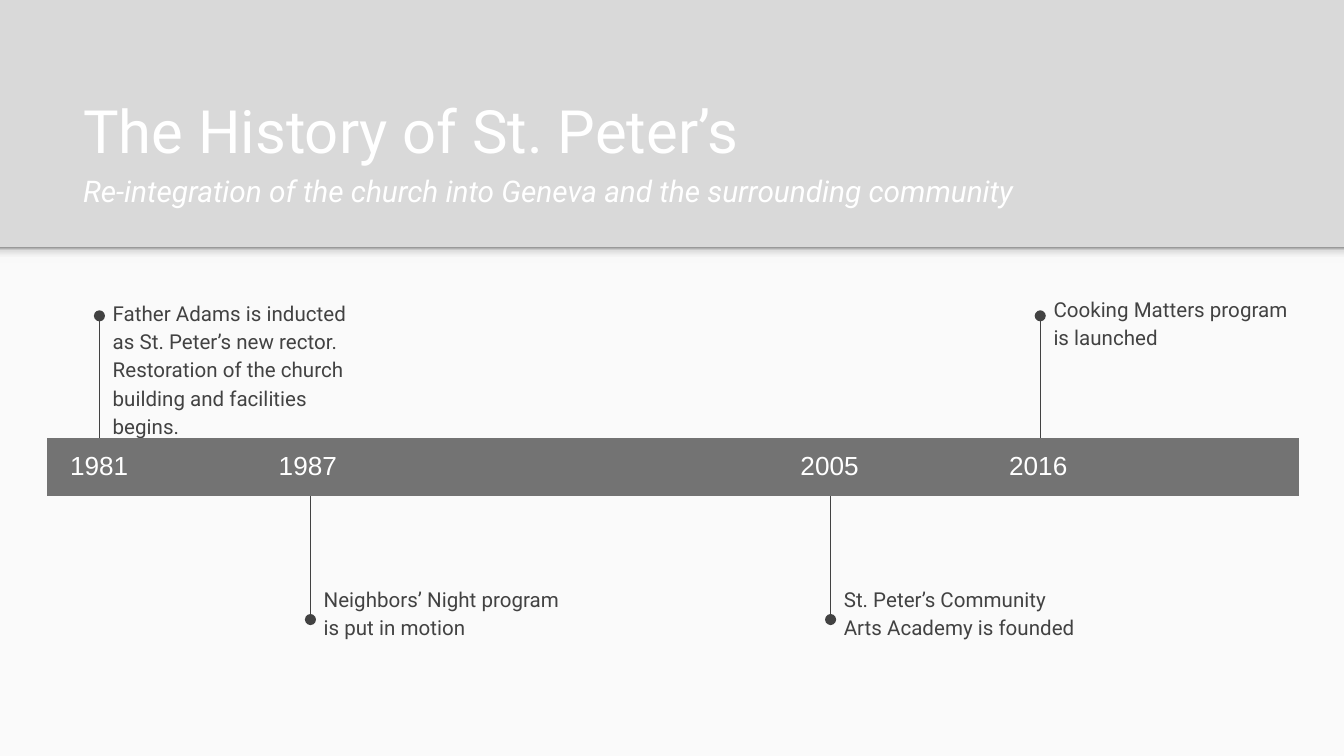
from dataclasses import dataclass

from lxml.etree import SubElement
from pptx import Presentation
from pptx.dml.color import RGBColor as Rgb
from pptx.enum.shapes import MSO_CONNECTOR as Connector, MSO_SHAPE as Shape
from pptx.enum.text import MSO_ANCHOR as Anchor, PP_ALIGN as Align
from pptx.oxml import parse_xml
from pptx.oxml.ns import nsdecls, qn
from pptx.util import Inches, Pt


@dataclass(frozen=True)
class Theme:
    header: str = "D9D9D9"
    panel: str = "FAFAFA"
    band: str = "737373"
    ink: str = "424242"
    light: str = "FFFFFF"
    shade: tuple = ((0, "F9F9F9"), (36, "F9F9F9"), (80, "DEDEDE"), (100, "999999"))
    font: str = "Roboto"
    year_font: str = "Arial"
    title_size: int = 32
    subtitle_size: int = 16
    year_size: int = 14
    note_size: int = 11
    stem_width: float = 0.75
    plain_table: str = "{2D5ABB26-0587-4C30-8999-92F81FD0307C}"


class TimelineSlide:
    def __init__(self, slide, theme):
        self.slide = slide
        self.theme = theme
        backdrop = slide.background.fill
        backdrop.solid()
        backdrop.fore_color.rgb = Rgb.from_string(theme.header)

    def add_run(self, paragraph, text, size, color, font, italic=False):
        run = paragraph.add_run()
        run.text = text
        run.font.size = Pt(size)
        run.font.name = font
        run.font.italic = italic
        run.font.color.rgb = Rgb.from_string(color)

    def add_panel(self, left, top, width, height):
        panel = self.slide.shapes.add_shape(
            Shape.RECTANGLE, Inches(left), Inches(top), Inches(width), Inches(height))
        panel.shadow.inherit = False
        panel.fill.solid()
        panel.fill.fore_color.rgb = Rgb.from_string(self.theme.panel)
        panel.line.fill.background()
        return panel

    def add_shade(self, left, top, width, height):
        shade = self.add_panel(left, top, width, height)
        stops = "".join(
            f'<a:gs pos="{position * 1000}"><a:srgbClr val="{color}"/></a:gs>'
            for position, color in self.theme.shade)
        gradient = parse_xml(
            f'<a:gradFill {nsdecls("a")} rotWithShape="1"><a:gsLst>{stops}</a:gsLst>'
            '<a:lin ang="16200000" scaled="0"/></a:gradFill>')
        properties = shade._element.spPr
        properties.replace(properties.find(qn("a:solidFill")), gradient)

    def add_frame(self, left, top, width, height, anchor=Anchor.TOP):
        box = self.slide.shapes.add_textbox(
            Inches(left), Inches(top), Inches(width), Inches(height))
        frame = box.text_frame
        frame.word_wrap = True
        frame.vertical_anchor = anchor
        frame.margin_left = frame.margin_right = Inches(0.1)
        frame.margin_top = frame.margin_bottom = Inches(0.1)
        return frame

    def add_heading(self, title, subtitle):
        theme = self.theme
        heading = self.add_frame(0.52, 0.81, 8.99, 0.84, Anchor.BOTTOM)
        self.add_run(heading.paragraphs[0], title, theme.title_size, theme.light, theme.font)
        second = heading.add_paragraph()
        second.space_before = second.space_after = Pt(4)
        self.add_run(second, subtitle, theme.subtitle_size, theme.light, theme.font, True)

    def add_stem(self, x, start, end):
        stem = self.slide.shapes.add_connector(
            Connector.STRAIGHT, Inches(x), Inches(start), Inches(x), Inches(end))
        stem.line.width = Pt(self.theme.stem_width)
        stem.line.color.rgb = Rgb.from_string(self.theme.ink)
        SubElement(stem.line._get_or_add_ln(), qn("a:tailEnd"), type="oval")
        SubElement(stem._element.spPr, qn("a:effectLst"))

    def add_note(self, text, left, top, height):
        theme = self.theme
        paragraph = self.add_frame(left, top, 1.98, height).paragraphs[0]
        paragraph.line_spacing = 1.15
        paragraph.space_after = Pt(16)
        self.add_run(paragraph, text, theme.note_size, theme.ink, theme.font)

    def add_year_band(self, years, columns, left, top, width, height):
        theme = self.theme
        band = self.slide.shapes.add_table(
            1, columns, Inches(left), Inches(top), Inches(width), Inches(height)).table
        band.first_row = band.horz_banding = False
        band._tbl.tblPr.find(qn("a:tableStyleId")).text = theme.plain_table
        for index, cell in enumerate(band.rows[0].cells):
            cell.fill.solid()
            cell.fill.fore_color.rgb = Rgb.from_string(theme.band)
            year = years.get(index)
            margin = Inches(0.1 if year else 0)
            cell.margin_left = cell.margin_right = margin
            cell.margin_top = cell.margin_bottom = margin
            if year:
                paragraph = cell.text_frame.paragraphs[0]
                paragraph.alignment = Align.CENTER
                self.add_run(paragraph, year, theme.year_size, theme.light, theme.year_font)


SLIDE_WIDTH = 10
SLIDE_HEIGHT = SLIDE_WIDTH * 9 / 16
HEADER_HEIGHT = 1.84
BAND_TOP, BAND_HEIGHT = 3.26, 0.42
ABOVE = (BAND_TOP, 2.35)
BELOW = (3.69, 4.61)
EVENTS = [
    ("1981", 0, 0.74, ABOVE, 2.11, 0.92,
     "Father Adams is inducted as St. Peter’s new rector. "
     "Restoration of the church building and facilities begins."),
    ("1987", 2, 2.31, BELOW, 4.24, 0.63, "Neighbors’ Night program is put in motion"),
    ("2005", 7, 6.18, BELOW, 4.24, 0.63, "St. Peter’s Community Arts Academy is founded"),
    ("2016", 9, 7.74, ABOVE, 2.08, 0.63, "Cooking Matters program is launched"),
]


def main():
    deck = Presentation()
    deck.slide_width, deck.slide_height = Inches(SLIDE_WIDTH), Inches(SLIDE_HEIGHT)
    history = TimelineSlide(deck.slides.add_slide(deck.slide_layouts[6]), Theme())
    history.add_panel(0, HEADER_HEIGHT, SLIDE_WIDTH, SLIDE_HEIGHT - HEADER_HEIGHT)
    history.add_shade(0, HEADER_HEIGHT, SLIDE_WIDTH, 0.12)
    history.add_heading(
        "The History of St. Peter’s",
        "Re-integration of the church into Geneva and the surrounding community")
    for _, _, x, stem, note_top, note_height, note in EVENTS:
        history.add_stem(x, *stem)
        history.add_note(note, x, note_top, note_height)
    years = {column: year for year, column, *_ in EVENTS}
    history.add_year_band(years, 12, 0.35, BAND_TOP, 9.32, BAND_HEIGHT)
    deck.save("out.pptx")


if __name__ == "__main__":
    main()
